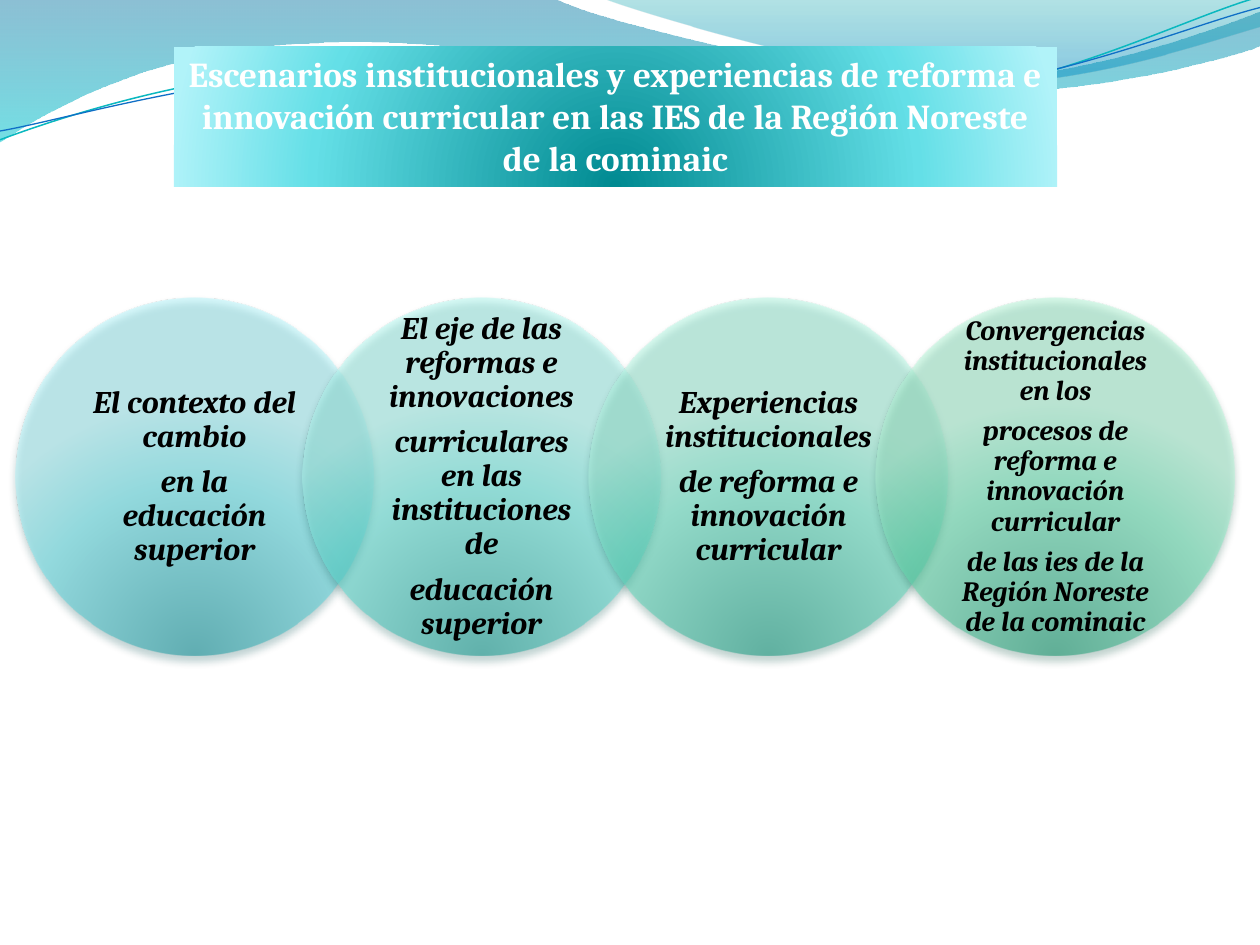
from lxml import etree
from pptx import Presentation
from pptx.dml.color import RGBColor
from pptx.enum.shapes import MSO_SHAPE
from pptx.enum.text import MSO_ANCHOR, MSO_AUTO_SIZE, PP_ALIGN
from pptx.oxml.ns import qn
from pptx.util import Inches, Pt

OVAL = MSO_SHAPE.OVAL
CENTER = PP_ALIGN.CENTER
TOP, MIDDLE = MSO_ANCHOR.TOP, MSO_ANCHOR.MIDDLE
NO_AUTOFIT = MSO_AUTO_SIZE.NONE

FONT = "Cambria"
WHITE = RGBColor(0xFF, 0xFF, 0xFF)
BLACK = RGBColor(0, 0, 0)
TEAL_LINE = RGBColor(0x0A, 0xB8, 0xBF)
BLUE_LINE = RGBColor(0x0F, 0x6F, 0xC6)
CYANS = [RGBColor.from_string(c) for c in ("008A91", "64DFE7", "B1F3F9")]
TEALS = [RGBColor.from_string(c) for c in ("008F85", "64E4D9", "B1F7EF")]
MINTS = [RGBColor.from_string(c) for c in ("008E72", "65E1C3", "B1F5E1")]
GREENS = [RGBColor.from_string(c) for c in ("008C60", "65DEB0", "B2F4D6")]
SHADOWS = [RGBColor.from_string(c) for c in ("024B4E", "034D48", "034C3F", "044A37")]
GLOW_STOPS = (0, 68, 100)

# Gradient stops: position %, colour, opacity %
LEFT_WAVE_STOPS = [(0, RGBColor(0x00, 0x74, 0xA1), 45), (100, RGBColor(0x00, 0xC6, 0xCF), 55)]
RIGHT_WAVE_STOPS = [(0, RGBColor(0x00, 0xA1, 0xA9), 30), (80, RGBColor(0x00, 0x8B, 0xBF), 45)]

# Outlines in inches: pairs are points, sextets are Bézier curves
LEFT_WAVE = [
    (0, 0), (4.4, -0.01), (4.76, 0.17, 6.64, 0.63, 7.58, 0.63),
    (8.53, 0.63, 9.58, 0.26, 10, 0.09), (10.01, 0.36),
    (9.83, 0.44, 8.7, 0.76, 7.46, 0.75), (6.22, 0.75, 3.82, 0.28, 2.57, 0.34),
    (1.29, 0.36, 0.46, 0.83, -0.01, 1.13), (0, 0),
]
RIGHT_WAVE = [
    (4.79, -0.01), (5.09, 0.11, 6.82, 0.62, 7.69, 0.65),
    (8.56, 0.69, 9.61, 0.32, 10, 0.21), (10, 0), (4.79, -0.01),
]
TEAL_CURVE = [
    (0, 1.11), (0.48, 0.93, 1.58, 0.57, 2.77, 0.52),
    (3.95, 0.47, 5.93, 0.89, 7.13, 0.8), (8.33, 0.71, 9.38, 0.15, 9.98, -0.02),
]
BLUE_CURVE = [
    (0, 1.04), (0.47, 0.96, 1.64, 0.61, 2.83, 0.56),
    (4.03, 0.51, 5.97, 0.84, 7.17, 0.75), (8.36, 0.67, 9.41, 0.21, 10, 0.06),
]

TITLE = ("Escenarios institucionales y experiencias de reforma e innovación "
         "curricular en las IES de la Región Noreste de la cominaic")
TOPICS = [
    (CYANS, 18, ["El contexto del cambio", "en la educación superior"]),
    (TEALS, 18, ["El eje de las reformas e innovaciones",
                 "curriculares en las instituciones de", "educación superior"]),
    (MINTS, 18, ["Experiencias institucionales", "de reforma e innovación curricular"]),
    (GREENS, 16, ["Convergencias institucionales en los",
                  "procesos de reforma e innovación curricular",
                  "de las ies de la Región Noreste de la cominaic"]),
]
PITCH = 0.8  # distance between circle centres, in diameters


def set_attrs(obj, **values):
    for name, value in values.items():
        setattr(obj, name, value)


def add_node(parent, tag, **attrs):
    return etree.SubElement(parent, qn(tag), {k: str(v) for k, v in attrs.items()})


def add_color(parent, color, opacity):
    clr = add_node(parent, "a:srgbClr", val=color)
    if opacity < 100:
        add_node(clr, "a:alpha", val=opacity * 1000)


def fill_gradient(sp, stops):
    """Fill with the given stops and return the gradient node, still without direction."""
    sp.fill.gradient()
    grad = sp._element.spPr.find(qn("a:gradFill"))
    for child in list(grad):
        grad.remove(child)
    gs_list = add_node(grad, "a:gsLst")
    for pos, color, opacity in stops:
        add_color(add_node(gs_list, "a:gs", pos=pos * 1000), color, opacity)
    return grad


def fill_glow(sp, colors, opacity=100):
    """Radial gradient centred below the shape."""
    grad = fill_gradient(sp, [(pos, c, opacity) for pos, c in zip(GLOW_STOPS, colors)])
    radial = add_node(grad, "a:path", path="circle")
    add_node(radial, "a:fillToRect", l=50000, t=130000, r=50000, b=-30000)


def add_shadow(sp, color):
    sp.shadow.inherit = False
    effects = sp._element.spPr.find(qn("a:effectLst"))
    shadow = add_node(effects, "a:outerShdw", blurRad=Pt(4.5), dist=Pt(3),
                      dir=90 * 60000, algn="ctr", rotWithShape=0)
    add_color(shadow, color, 48)


def add_outline(slide, outline, close):
    """Freeform whose sextets become true Bézier curves."""
    start, *points = [(Inches(x), Inches(y)) for seg in outline
                      for x, y in zip(seg[::2], seg[1::2])]
    builder = slide.shapes.build_freeform(*start)
    builder.add_line_segments(points, close=close)
    sp = builder.convert_to_shape()
    sp.shadow.inherit = False
    lines = sp._element.spPr.iter(qn("a:lnTo"))
    lines = iter(list(lines))
    for seg in outline[1:]:
        first, *others = [next(lines) for _ in range(len(seg) // 2)]
        if others:
            curve = etree.Element(qn("a:cubicBezTo"))
            first.addprevious(curve)
            for line in (first, *others):
                curve.append(line[0])
                line.getparent().remove(line)
    return sp


def add_waves(slide):
    for outline, stops in ((LEFT_WAVE, LEFT_WAVE_STOPS), (RIGHT_WAVE, RIGHT_WAVE_STOPS)):
        sp = add_outline(slide, outline, close=True)
        add_node(fill_gradient(sp, stops), "a:lin", ang=90 * 60000, scaled=0)
        sp.line.fill.background()
    for outline, color, width in ((TEAL_CURVE, TEAL_LINE, 0.85), (BLUE_CURVE, BLUE_LINE, 0.75)):
        sp = add_outline(slide, outline, close=False)
        sp.fill.background()
        sp.line.color.rgb = color
        sp.line.width = Pt(width)


def write_text(tf, paragraphs, size, color, italic=False, spacing=1.0, after=0):
    for i, text in enumerate(paragraphs):
        p = tf.paragraphs[0] if i == 0 else tf.add_paragraph()
        set_attrs(p, alignment=CENTER, line_spacing=spacing, space_after=Pt(after))
        r = p.add_run()
        r.text = text
        set_attrs(r.font, name=FONT, size=Pt(size), bold=True, italic=italic)
        r.font.color.rgb = color


def place_title(slide, left, top, width, height):
    sp = slide.shapes.title
    set_attrs(sp, left=left, top=top, width=width, height=height)
    fill_glow(sp, CYANS)
    set_attrs(sp.text_frame, word_wrap=True, auto_size=NO_AUTOFIT, vertical_anchor=TOP)
    write_text(sp.text_frame, [TITLE], 20, WHITE)
    sp._element.getparent().append(sp._element)  # in front of the waves


def add_topic_chain(slide, left, top, width):
    """Row of overlapping circles, each with its text in the inscribed square."""
    diameter = int(width / (1 + PITCH * (len(TOPICS) - 1)))
    side = int(diameter * 0.5**0.5)
    margin = (diameter - side) // 2
    for i, (colors, size, paragraphs) in enumerate(TOPICS):
        x = left + int(i * PITCH * diameter)
        sp = slide.shapes.add_shape(OVAL, x, top, diameter, diameter)
        fill_glow(sp, colors, opacity=50)
        sp.line.fill.background()
        add_shadow(sp, SHADOWS[i])
        tf = slide.shapes.add_textbox(x + margin, top + margin, side, side).text_frame
        set_attrs(tf, word_wrap=True, vertical_anchor=MIDDLE,
                  margin_left=Inches(0.16), margin_right=Inches(0.16),
                  margin_top=Inches(0.03), margin_bottom=Inches(0.03))
        write_text(tf, paragraphs, size, BLACK, italic=True, spacing=0.9, after=0.35 * size)


def main():
    prs = Presentation()
    set_attrs(prs, slide_width=Inches(10), slide_height=Inches(7.5))
    slide = prs.slides.add_slide(prs.slide_layouts.get_by_name("Title Only"))
    add_waves(slide)
    place_title(slide, Inches(1.38), Inches(0.37), Inches(7.01), Inches(1.11))
    add_topic_chain(slide, Inches(0.12), Inches(2.36), Inches(9.68))
    prs.save("out.pptx")


if __name__ == "__main__":
    main()
